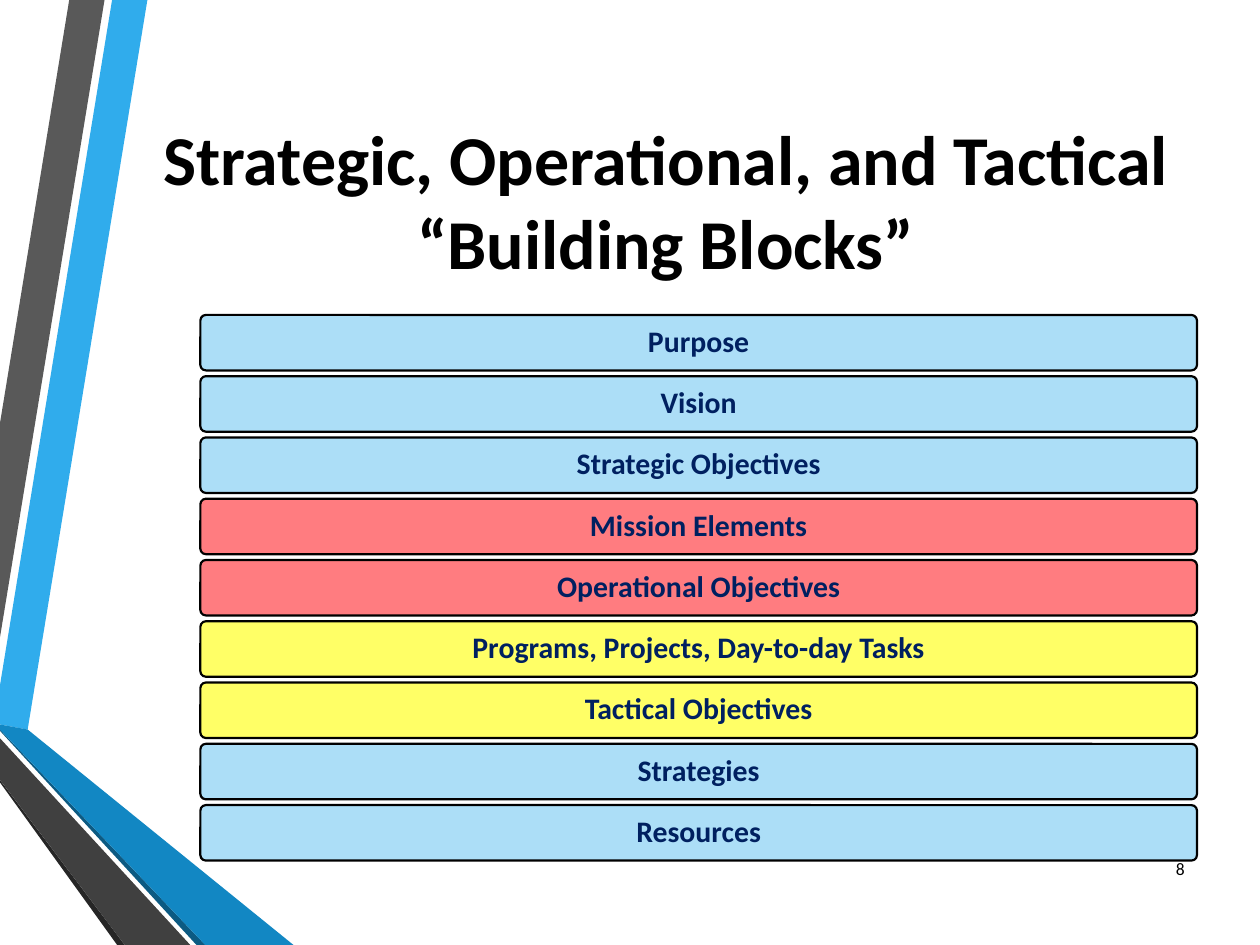
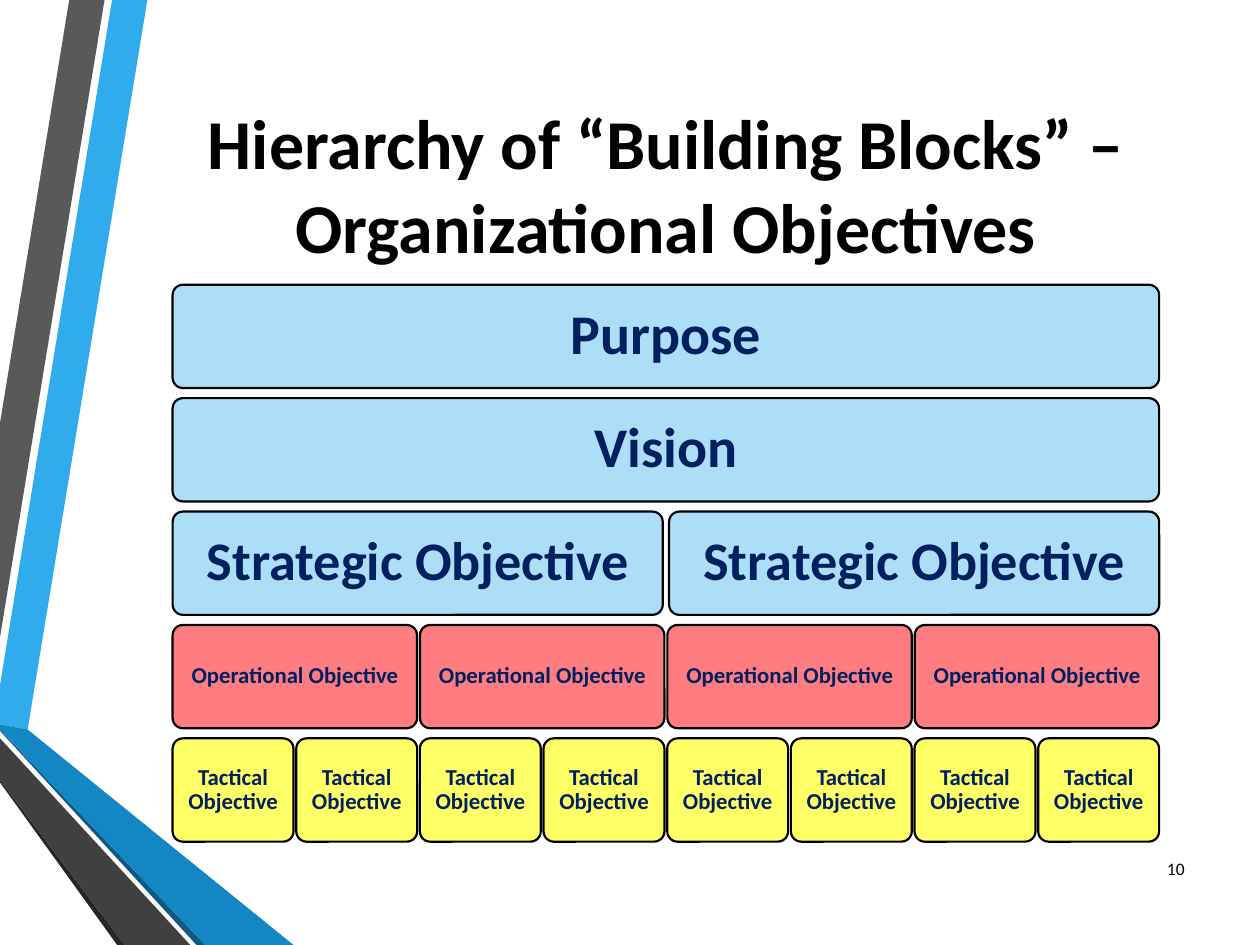
import dataclasses

import pptx
import pptx.dml.color
import pptx.enum.shapes
import pptx.enum.text
import pptx.util

Inches = pptx.util.Inches
Align = pptx.enum.text.PP_ALIGN

# Shared look
FONT = "Calibri"
BLACK, NAVY = "000000", "002060"
BLUE, RED, YELLOW = "ACDEF7", "FF7C80", "FFFF66"


@dataclasses.dataclass
class Box:
    left: float
    top: float
    width: float
    height: float


@dataclasses.dataclass
class Band:
    fill: str
    points: list[tuple[float, float]]


@dataclasses.dataclass
class Tier:
    label: str
    fill: str
    count: int
    width: float
    size: float
    inset: float


BANDS = [
    Band("30ACEC", [(0, 5.44), (0, 5.75), (0.22, 5.79), (1.17, 0), (0.89, 0)]),
    Band("595959", [(0.83, 0), (0.55, 0), (0, 3.36), (0, 5.06)]),
    Band("262626", [(0, 6.19), (0, 6.21), (0.93, 7.5), (0.99, 7.5)]),
    Band("0C5A82", [(0, 5.79), (0, 5.8), (1.56, 7.5), (1.63, 7.5)]),
    Band("1287C3", [(0, 5.79), (1.63, 7.5), (2.33, 7.5), (0.22, 5.79), (0, 5.75)]),
    Band("404040", [(0, 6.19), (0.99, 7.5), (1.51, 7.5), (0, 5.86)]),
]

# Slide content
BLOCKS = [
    ("Purpose", BLUE),
    ("Vision", BLUE),
    ("Strategic Objectives", BLUE),
    ("Mission Elements", RED),
    ("Operational Objectives", RED),
    ("Programs, Projects, Day-to-day Tasks", YELLOW),
    ("Tactical Objectives", YELLOW),
    ("Strategies", BLUE),
    ("Resources", BLUE),
]
SPAN = 7.83
TIERS = [
    Tier("Purpose", BLUE, 1, SPAN, 32, 0.13),
    Tier("Vision", BLUE, 1, SPAN, 32, 0.13),
    Tier("Strategic Objective", BLUE, 2, 3.89, 31, 0.13),
    Tier("Operational Objective", RED, 4, 1.94, 13, 0.05),
    Tier("Tactical Objective", YELLOW, 8, 0.96, 13, 0.05),
]


def color(code: str) -> pptx.dml.color.RGBColor:
    return pptx.dml.color.RGBColor.from_string(code)


def spot(box: Box) -> list[int]:
    return [Inches(n) for n in dataclasses.astuple(box)]


def write(shape, text: str, *, size: float, ink: str = BLACK, bold: bool = False,
          align=Align.CENTER, inset: float | None = None,
          space: float | None = None) -> None:
    frame = shape.text_frame
    frame.text = text
    frame.word_wrap = True
    frame.auto_size = pptx.enum.text.MSO_AUTO_SIZE.NONE
    frame.vertical_anchor = pptx.enum.text.MSO_ANCHOR.MIDDLE
    if inset is not None:
        frame.margin_left = frame.margin_right = Inches(inset)
        frame.margin_top = frame.margin_bottom = Inches(inset)
    para = frame.paragraphs[0]
    para.alignment = align
    if space is not None:
        para.line_spacing = space
    font = para.runs[0].font
    font.name, font.size, font.bold = FONT, pptx.util.Pt(size), bold
    font.color.rgb = color(ink)


def paint(shape, fill: str) -> None:
    shape.shadow.inherit = False
    shape.fill.solid()
    shape.fill.fore_color.rgb = color(fill)


def draw_band(slide, band: Band) -> None:
    dots = [(Inches(x), Inches(y)) for x, y in band.points]
    path = slide.shapes.build_freeform(*dots[0])
    path.add_line_segments(dots[1:], close=True)
    shape = path.convert_to_shape()
    paint(shape, band.fill)
    shape.line.fill.background()


def draw_block(slide, text: str, box: Box, fill: str, size: float,
               inset: float) -> None:
    kind = pptx.enum.shapes.MSO_SHAPE.ROUNDED_RECTANGLE
    shape = slide.shapes.add_shape(kind, *spot(box))
    shape.adjustments[0] = 0.1
    paint(shape, fill)
    shape.line.color.rgb = color(BLACK)
    shape.line.width = pptx.util.Pt(1.25)
    write(shape, text, size=size, ink=NAVY, bold=True, inset=inset, space=0.9)


def add_page(deck, title: str, box: Box, number: int):
    """Start a slide with the side bands, title and page number."""
    slide = deck.slides.add_slide(deck.slide_layouts[5])
    for band in BANDS:
        draw_band(slide, band)
    head = slide.shapes.title
    head.left, head.top, head.width, head.height = spot(box)
    write(head, title, size=40, bold=True)
    foot = slide.shapes.add_textbox(*spot(Box(9.05, 6.69, 0.45, 0.4)))
    write(foot, str(number), size=10, align=Align.RIGHT)
    return slide


def draw_stack(deck) -> None:
    slide = add_page(deck, "Strategic, Operational, and Tactical “Building Blocks”",
                     Box(1.07, 0.5, 8.43, 2.17), 8)
    step = (6.39 - 2.5) / (len(BLOCKS) - 1)
    for row, (text, fill) in enumerate(BLOCKS):
        draw_block(slide, text, Box(1.59, 2.5 + row * step, 7.91, 0.44),
                   fill, 17, 0.07)


def draw_tree(deck) -> None:
    slide = add_page(deck, "Hierarchy of “Building Blocks” – Organizational Objectives",
                     Box(1.07, 0.25, 8.43, 2.42), 10)
    for row, tier in enumerate(TIERS):
        # Each tier fills the same span from edge to edge
        step = (SPAN - tier.width) / max(tier.count - 1, 1)
        for col in range(tier.count):
            box = Box(1.37 + col * step, 2.26 + row * 0.9, tier.width, 0.82)
            draw_block(slide, tier.label, box, tier.fill, tier.size, tier.inset)


def main() -> None:
    deck = pptx.Presentation()
    deck.slide_width, deck.slide_height = Inches(10), Inches(7.5)
    draw_stack(deck)
    draw_tree(deck)
    deck.save("out.pptx")


if __name__ == "__main__":
    main()
